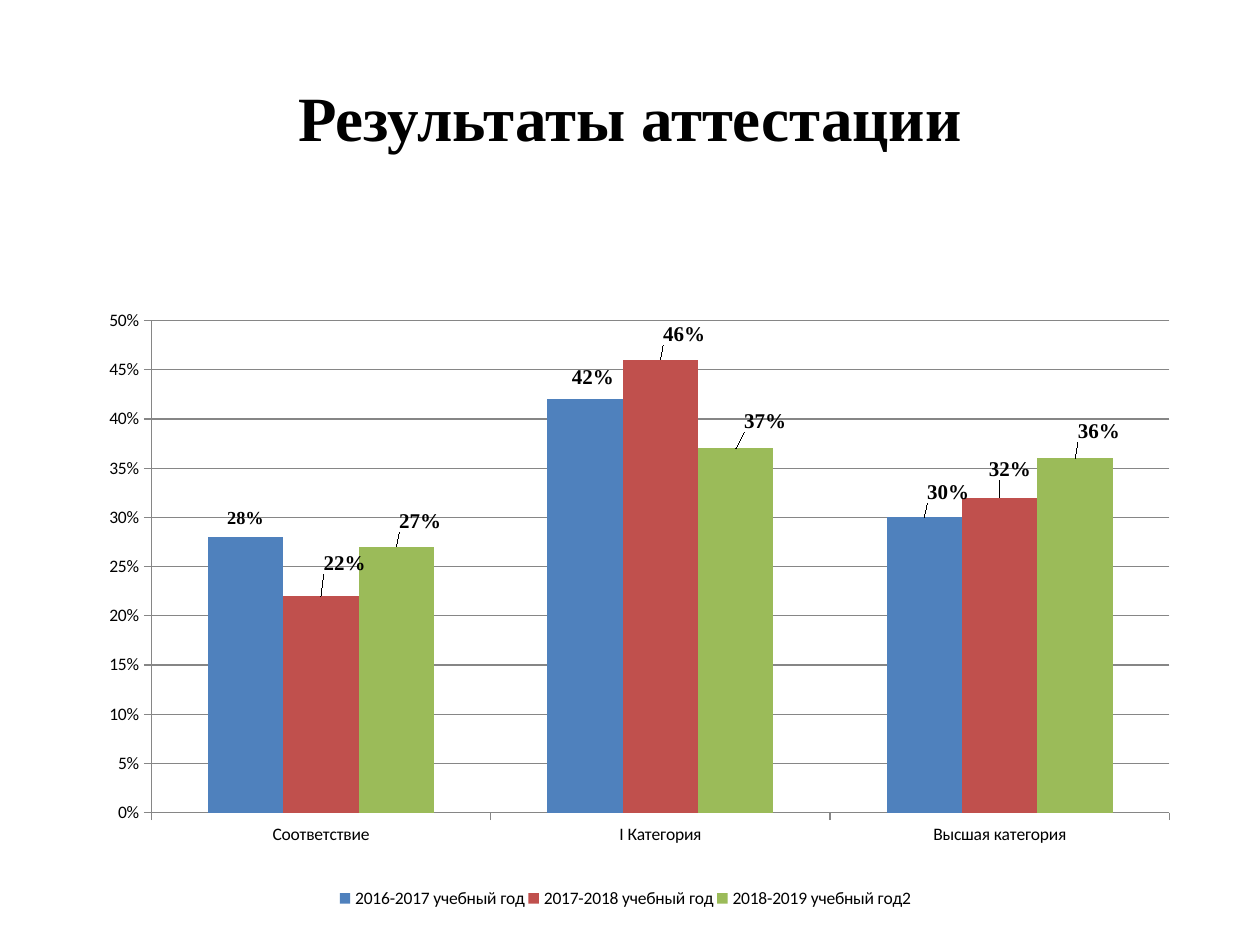
from lxml import etree
from pptx import Presentation
from pptx import util as u
from pptx.chart.data import CategoryChartData
from pptx.dml.color import RGBColor
from pptx.enum import chart as ch
from pptx.enum import text
from pptx.oxml import ns

SCALE = 914400 / 126
COLOURS = {"ink": "000000", "rule": "868686"}
CATEGORIES = ["Соответствие", "I Категория", "Высшая категория"]
YEARS = [
    ("2016-2017 учебный год", "4F81BD", [0.28, 0.42, 0.3],
     [(0, -4), (8, -6), (24, -9)]),
    ("2017-2018 учебный год", "C0504D", [0.22, 0.46, 0.32],
     [(24, -17), (24, -10), (10, -12)]),
    ("2018-2019 учебный год2", "9BBB59", [0.27, 0.37, 0.36],
     [(24, -10), (29, -11), (24, -11)]),
]
CHART_BOX = (64, 155, 1134, 808)
PLOT_AREA = {"layoutTarget": "inner", "xMode": "edge", "yMode": "edge",
             "x": 0.077, "y": 0.205, "w": 0.898, "h": 0.609}
LEGEND_AREA = {"xMode": "edge", "yMode": "edge",
               "x": 0.24, "y": 0.9, "w": 0.51, "h": 0.04}
EXT_URI = "{CE6537A1-D6FC-4f65-9D91-7224C49458BB}"
C15 = "http://schemas.microsoft.com/office/drawing/2012/chart"


def px(length):
    """Turn pixels into EMU."""
    return u.Emu(round(length * SCALE))


def rgb(hex_value):
    """Turn a hex string into a colour."""
    return RGBColor.from_string(hex_value)


def style_font(font, name, size, bold=False):
    """Set the face, size, weight and ink of a font."""
    font.name, font.size, font.bold = name, u.Pt(size), bold
    font.color.rgb = rgb(COLOURS["ink"])


def set_layout(part, index, values):
    """Give a chart part a manual layout as its child at the index."""
    for previous in part.findall(ns.qn("c:layout")):
        part.remove(previous)
    layout = etree.Element(ns.qn("c:layout"))
    manual = etree.SubElement(layout, ns.qn("c:manualLayout"))
    for key, value in values.items():
        etree.SubElement(manual, ns.qn(f"c:{key}")).set("val", str(value))
    part.insert(index, layout)


def place(shape, left, top, width, height):
    """Move and size a shape in pixels."""
    shape.left, shape.top = px(left), px(top)
    shape.width, shape.height = px(width), px(height)


def add_title(slide, wording):
    """Fill and format the title placeholder."""
    title = slide.shapes.title
    place(title, 63, 37, 1134, 158)
    title.text_frame.text = wording
    title.text_frame.vertical_anchor = text.MSO_ANCHOR.MIDDLE
    heading = title.text_frame.paragraphs[0]
    heading.alignment = text.PP_ALIGN.CENTER
    style_font(heading.font, "Times New Roman", 36, True)


def style_line(line):
    """Give an axis or grid line its grey stroke."""
    line.color.rgb = rgb(COLOURS["rule"])
    line.width = u.Pt(0.75)


def style_axes(chart):
    """Set the scale, ticks and lines of both axes."""
    for axis in (chart.category_axis, chart.value_axis):
        axis.major_tick_mark = ch.XL_TICK_MARK.OUTSIDE
        axis.minor_tick_mark = ch.XL_TICK_MARK.NONE
        style_line(axis.format.line)
    percent = chart.value_axis
    percent.minimum_scale, percent.maximum_scale = 0, 0.5
    percent.major_unit = 0.05
    percent.has_major_gridlines = True
    style_line(percent.major_gridlines.format.line)
    percent.tick_labels.number_format = "0%"
    percent.tick_labels.number_format_is_linked = False


def set_leaders(labels, shown):
    """Show or hide the lines from moved labels to their bars."""
    for leader in labels.findall(ns.qn("c:showLeaderLines")):
        labels.remove(leader)
    extensions = etree.SubElement(labels, ns.qn("c:extLst"))
    extension = etree.SubElement(extensions, ns.qn("c:ext"), nsmap={"c15": C15})
    extension.set("uri", EXT_URI)
    leader = etree.SubElement(extension, f"{{{C15}}}showLeaderLines")
    leader.set("val", str(int(shown)))


def label_bars(year, offsets, first_size, leaders):
    """Label each bar of a year, shifted by pixel offsets."""
    for index, (right, down) in enumerate(offsets):
        label = year.points[index].data_label
        style_font(label.font, "Times New Roman", 12 if index else first_size, True)
        label.position = ch.XL_LABEL_POSITION.OUTSIDE_END
        entry = year.data_labels._element.findall(ns.qn("c:dLbl"))[index]
        set_layout(entry, 1, {"x": round(right / CHART_BOX[2], 3),
                              "y": round(down / CHART_BOX[3], 3)})
    labels = year.data_labels
    labels.show_value = True
    labels.number_format, labels.number_format_is_linked = "0%", False
    set_leaders(labels._element, leaders)


def add_legend(chart):
    """Set the legend in a row below the categories."""
    chart.has_legend = True
    chart.legend.position = ch.XL_LEGEND_POSITION.BOTTOM
    chart.legend.include_in_layout = False
    set_layout(chart.legend._element, 1, LEGEND_AREA)


def add_results_chart(slide):
    """Add the clustered columns of results by year."""
    results = CategoryChartData(number_format="0%")
    results.categories = CATEGORIES
    for name, _, values, _ in YEARS:
        results.add_series(name, values)
    chart = slide.shapes.add_chart(ch.XL_CHART_TYPE.COLUMN_CLUSTERED,
                                   *map(px, CHART_BOX), results).chart
    style_font(chart.font, "Calibri", 10)
    chart.has_title = False
    add_legend(chart)
    style_axes(chart)
    plot = chart.plots[0]
    plot.gap_width, plot.overlap, plot.vary_by_categories = 150, 0, False
    for number, (year, (_, colour, _, offsets)) in enumerate(zip(plot.series, YEARS)):
        year.format.fill.solid()
        year.format.fill.fore_color.rgb = rgb(colour)
        year.invert_if_negative = False
        label_bars(year, offsets, 12 if number else 10.5, number == 0)
    set_layout(chart._chartSpace.find(".//" + ns.qn("c:plotArea")), 0, PLOT_AREA)


def main():
    """Build and save the slide."""
    deck = Presentation()
    deck.slide_width, deck.slide_height = px(1260), px(945)
    slide = deck.slides.add_slide(deck.slide_layouts[5])
    add_title(slide, "Результаты аттестации")
    add_results_chart(slide)
    deck.save("out.pptx")


if __name__ == "__main__":
    main()
